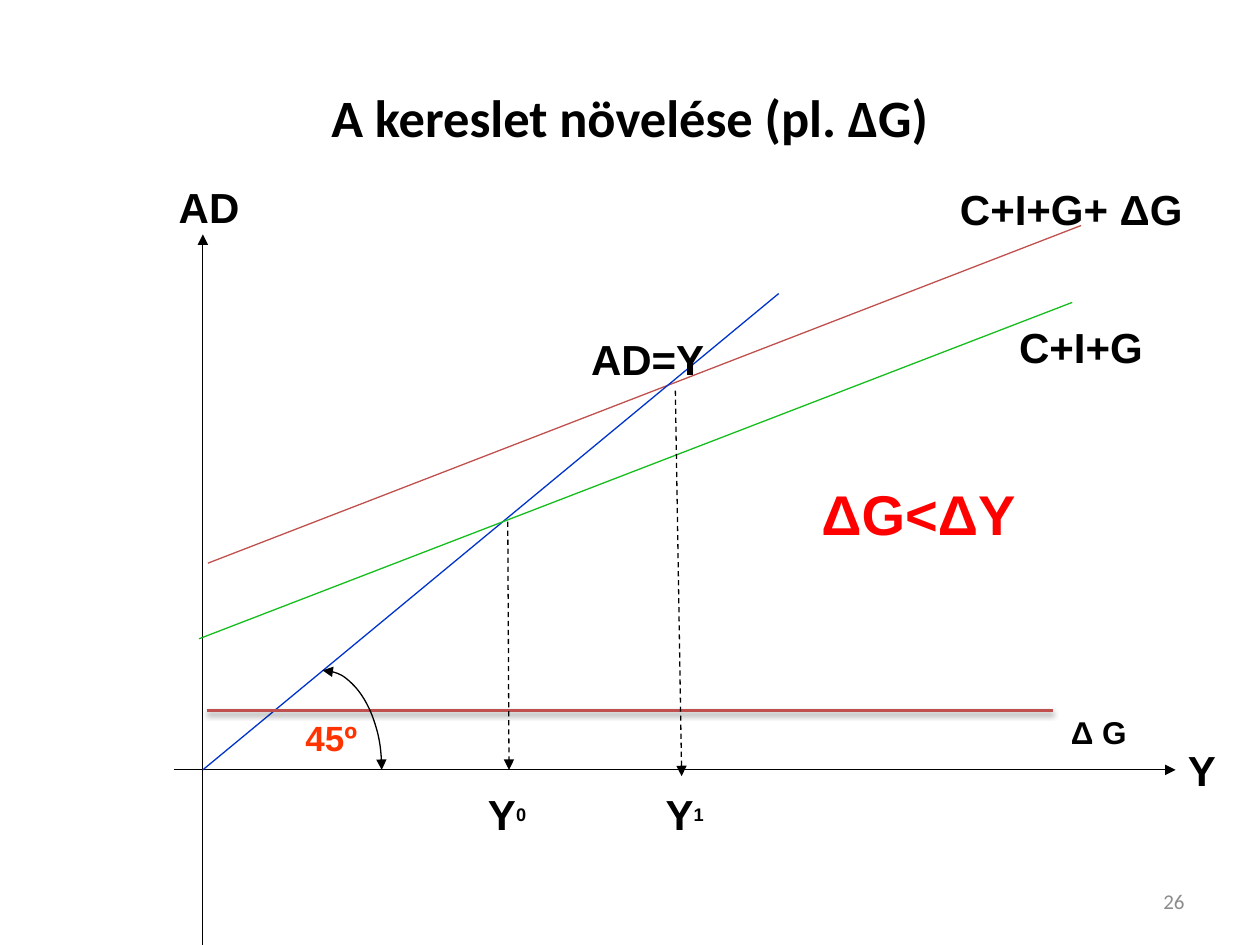
from lxml.etree import SubElement
from pptx import Presentation
from pptx.dml.color import RGBColor
from pptx.enum.dml import MSO_LINE
from pptx.enum.shapes import MSO_CONNECTOR, MSO_SHAPE
from pptx.enum.text import MSO_ANCHOR, PP_ALIGN
from pptx.oxml.ns import qn
from pptx.util import Inches, Pt

BLACK = RGBColor(0x00, 0x00, 0x00)
GRAY = RGBColor(0x8C, 0x8C, 0x8C)
RED = RGBColor(0xFF, 0x00, 0x00)
ORANGE = RGBColor(0xFF, 0x33, 0x00)
BRICK = RGBColor(0xC0, 0x50, 0x4D)
BLUE = RGBColor(0x00, 0x33, 0xCC)
GREEN = RGBColor(0x15, 0xBD, 0x1D)

ORIGIN_X, ORIGIN_Y = 1.61, 6.11


def add_label(page, box, text, size=24, color=BLACK, font="Arial", bold=True,
              align=PP_ALIGN.LEFT, anchor=MSO_ANCHOR.TOP, superscript=""):
    """Add one line of text; box is left, top, width, height in inches."""
    frame = page.shapes.add_textbox(*map(Inches, box)).text_frame
    frame.word_wrap = True
    frame.vertical_anchor = anchor
    para = frame.paragraphs[0]
    para.text = text
    para.alignment = align
    if superscript:
        para.add_run().text = superscript
    for span in para.runs:
        span.font.name = font
        span.font.size = Pt(size)
        span.font.bold = bold
        span.font.color.rgb = color
    if superscript:
        raised = para.runs[-1].font
        raised.size = Pt(18)
        para.runs[-1]._r.get_or_add_rPr().set("baseline", "30000")


def add_arrowheads(shape, *ends):
    """Add triangles to the given line ends, headEnd before tailEnd."""
    line = shape.line._get_or_add_ln()
    for end in ends:
        SubElement(line, qn(f"a:{end}"), type="triangle")


def add_line(page, start, end, color=BLACK, width=0.75, arrow=False, dashed=False):
    """Add a straight line without shadow and return its empty effect list."""
    line = page.shapes.add_connector(
        MSO_CONNECTOR.STRAIGHT, *map(Inches, (*start, *end)))
    line.line.color.rgb = color
    line.line.width = Pt(width)
    if dashed:
        line.line.dash_style = MSO_LINE.DASH
    if arrow:
        add_arrowheads(line, "tailEnd")
    return SubElement(line._element.spPr, qn("a:effectLst"))


def add_soft_shadow(effects):
    shadow = SubElement(effects, qn("a:outerShdw"), blurRad="40000", dist="20000",
                        dir="5400000", rotWithShape="0")
    color = SubElement(shadow, qn("a:srgbClr"), val=str(BLACK))
    SubElement(color, qn("a:alpha"), val="38000")


def add_axes(page):
    add_line(page, (ORIGIN_X, 7.5), (ORIGIN_X, 1.86), arrow=True)
    add_line(page, (1.38, ORIGIN_Y), (9.33, ORIGIN_Y), arrow=True)
    add_label(page, (1.32, 1.39, 0.92, 0.5), "AD")
    add_label(page, (9.33, 5.86, 0.63, 0.5), "Y")


def add_demand_lines(page):
    add_line(page, (1.65, 4.47), (8.58, 1.79), BRICK)
    add_line(page, (ORIGIN_X, ORIGIN_Y), (6.18, 2.33), BLUE)
    add_line(page, (1.58, 5.07), (8.51, 2.4), GREEN)
    add_soft_shadow(add_line(page, (1.64, 5.64), (8.36, 5.64), BRICK, width=2))
    add_label(page, (7.52, 1.41, 1.98, 0.5), "C+I+G+ ΔG")
    add_label(page, (7.99, 2.5, 1.61, 0.5), "C+I+G")
    add_label(page, (4.39, 2.6, 1.5, 0.5), "AD=Y", align=PP_ALIGN.CENTER)
    add_label(page, (8.4, 5.61, 0.83, 0.4), "Δ G", size=18)


def add_equilibrium(page, start, end, label_left, index):
    add_line(page, start, end, arrow=True, dashed=True)
    add_label(page, (label_left, 6.21, 0.83, 0.5), "Y",
              align=PP_ALIGN.CENTER, superscript=index)


def add_angle(page, center_x, radius_x, radius_y):
    """Mark the 45 degree angle with a quarter ellipse standing on the Y axis."""
    arc = page.shapes.add_shape(
        MSO_SHAPE.ARC, Inches(center_x - radius_x), Inches(ORIGIN_Y - radius_y),
        Inches(2 * radius_x), Inches(2 * radius_y))
    arc.shadow.inherit = False
    arc.fill.background()
    arc.line.color.rgb = BLACK
    arc.line.width = Pt(0.75)
    add_arrowheads(arc, "headEnd", "tailEnd")
    add_label(page, (2.16, 5.64, 0.94, 0.43), "45º", size=20, color=ORANGE,
              align=PP_ALIGN.CENTER)


def main():
    deck = Presentation()
    deck.slide_width, deck.slide_height = Inches(10), Inches(7.5)
    page = deck.slides.add_slide(deck.slide_layouts[6])
    add_label(page, (0.5, 0.3, 9, 1.25), "A kereslet növelése (pl. ΔG)", size=30,
              font="Calibri", align=PP_ALIGN.CENTER, anchor=MSO_ANCHOR.MIDDLE)
    add_axes(page)
    add_demand_lines(page)
    add_equilibrium(page, (4.03, 4.14), (4.04, ORIGIN_Y), 3.61, "0")
    add_equilibrium(page, (5.36, 3.1), (5.41, 6.16), 5.02, "1")
    add_angle(page, 2.56, 0.47, 0.79)
    add_label(page, (6.42, 3.76, 3.01, 0.94), "ΔG<ΔY", size=32, color=RED)
    add_label(page, (7.17, 6.95, 2.33, 0.4), "26", size=12, color=GRAY, font="Calibri",
              bold=False, align=PP_ALIGN.RIGHT, anchor=MSO_ANCHOR.MIDDLE)
    deck.save("out.pptx")


if __name__ == "__main__":
    main()
